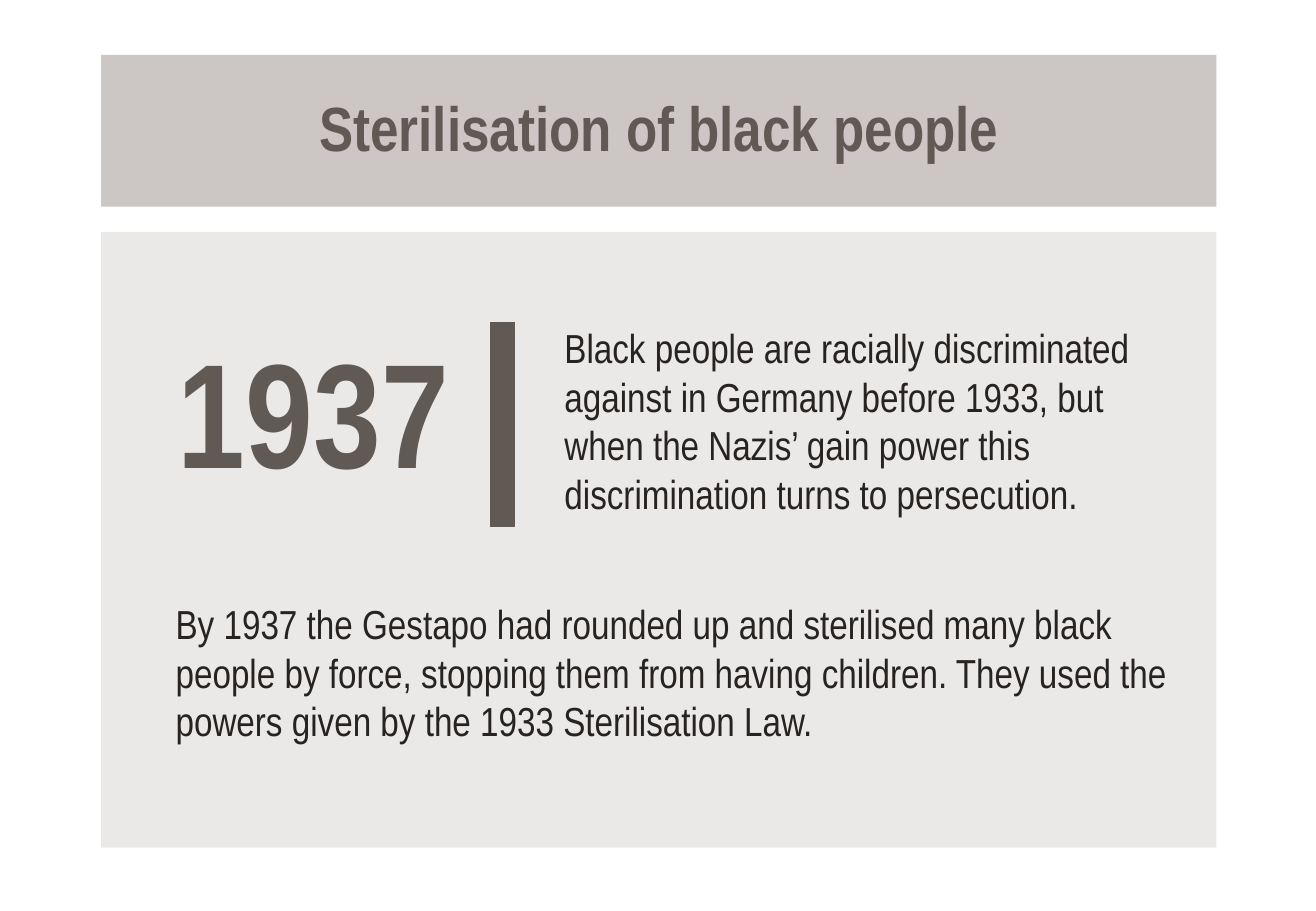
import pptx
import pptx.util
import pptx.dml.color
import pptx.enum.shapes
import pptx.enum.text
import pptx.oxml.ns
import lxml.etree

Pt = pptx.util.Pt
ALIGN = pptx.enum.text.PP_ALIGN
ANCHOR = pptx.enum.text.MSO_ANCHOR
COLORS = {"panel": "EBE9E8", "band": "CCC7C4", "brown": "615954", "ink": "262321"}
LEFT, WIDTH = 60, 661
INDENT, ROW, TALL = 97, 181.5, 135
BODY = {"size": Pt(24), "bold": False}


def color(name):
    return pptx.dml.color.RGBColor.from_string(COLORS[name])


class Page:
    def __init__(self, slide, font):
        self.slide = slide
        self.font = font

    def rect(self, box, fill):
        kind = pptx.enum.shapes.MSO_SHAPE.RECTANGLE
        shape = self.slide.shapes.add_shape(kind, *map(Pt, box))
        shape.shadow.inherit = False
        shape.fill.solid()
        shape.fill.fore_color.rgb = color(fill)
        shape.line.fill.background()
        return shape

    def bar(self, start, end, ink, width):
        kind = pptx.enum.shapes.MSO_CONNECTOR.STRAIGHT
        line = self.slide.shapes.add_connector(kind, *map(Pt, start + end))
        line.line.color.rgb = color(ink)
        line.line.width = Pt(width)
        props = line._element.spPr
        lxml.etree.SubElement(props, pptx.oxml.ns.qn("a:effectLst"))

    def label(self, shape, text, ink, style, anchor=ANCHOR.MIDDLE,
              align=ALIGN.LEFT, space=1.0):
        frame = shape.text_frame
        frame.word_wrap = True
        frame.vertical_anchor = anchor
        para = frame.paragraphs[0]
        para.alignment = align
        para.line_spacing = space
        run = para.add_run()
        run.text = text
        run.font.color.rgb = color(ink)
        for key, value in {"name": self.font, **style}.items():
            setattr(run.font, key, value)

    def text(self, box, *args, **options):
        shape = self.slide.shapes.add_textbox(*map(Pt, box))
        self.label(shape, *args, **options)


def main():
    deck = pptx.Presentation()
    deck.slide_width, deck.slide_height = Pt(780), Pt(540)
    page = Page(deck.slides.add_slide(deck.slide_layouts[6]), "Arial Narrow")

    page.rect((LEFT, 137.5, WIDTH, 365), "panel")
    page.text((INDENT, ROW, 176, TALL), "1937", "brown",
              {"size": Pt(88), "bold": True}, align=ALIGN.RIGHT, space=0.9)
    page.bar((298, 191), (298, 312.5), "brown", 15)
    page.text((327.5, ROW, 380, TALL),
              "Black people are racially discriminated against in Germany "
              "before 1933, but when the Nazis’ gain power this "
              "discrimination turns to persecution.", "ink", BODY)

    title = page.rect((LEFT, 32.5, WIDTH, 90), "band")
    page.label(title, "Sterilisation of black people", "brown",
               {"size": Pt(37), "bold": True}, align=ALIGN.CENTER, space=0.9)
    page.text((INDENT, 351.5, 610.5, 94.5),
              "By 1937 the Gestapo had rounded up and sterilised many black "
              "people by force, stopping them from having children. They used "
              "the powers given by the 1933 Sterilisation Law.",
              "ink", BODY, anchor=ANCHOR.TOP)
    deck.save("out.pptx")


if __name__ == "__main__":
    main()
